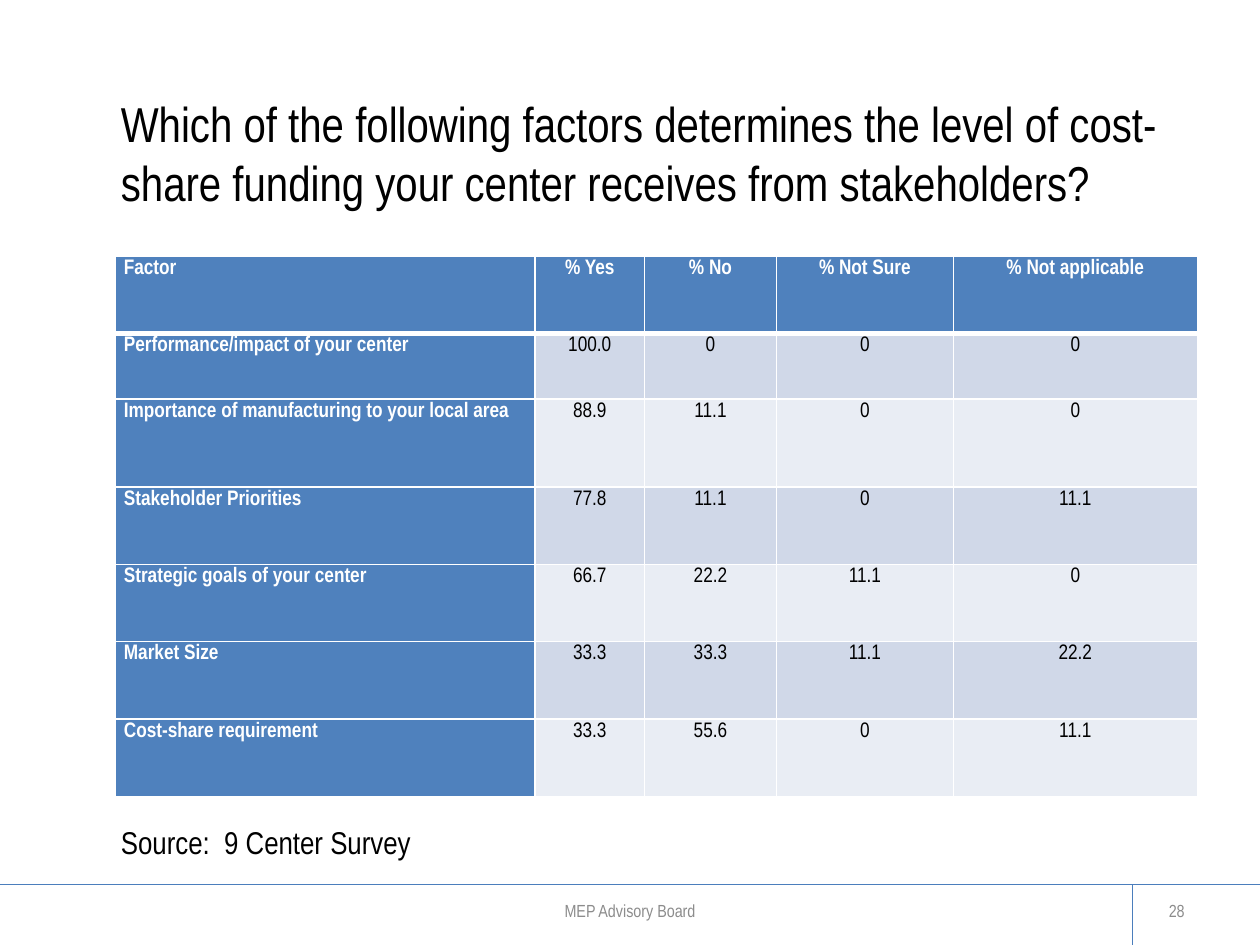
from lxml.etree import SubElement
from pptx import Presentation
from pptx.dml.color import RGBColor
from pptx.enum.shapes import MSO_CONNECTOR as Connector
from pptx.enum.text import MSO_ANCHOR as Anchor, PP_ALIGN as Align
from pptx.oxml.ns import qn
from pptx.util import Pt

FONT = "Arial Narrow"
BLACK = RGBColor(0x00, 0x00, 0x00)
WHITE = RGBColor(0xFF, 0xFF, 0xFF)
GREY = RGBColor(0x8C, 0x8C, 0x8C)
BLUE = RGBColor(0x4F, 0x81, 0xBD)
RULE_BLUE = RGBColor(0x4B, 0x7E, 0xBC)
BAND_DARK = RGBColor(0xD0, 0xD8, 0xE8)
BAND_LIGHT = RGBColor(0xE9, 0xED, 0xF4)

COLUMN_WIDTHS = [240, 62.5, 75.5, 101, 139.5]
ROW_HEIGHTS = [44.2, 37.5, 50.4, 44.2, 44.2, 44.2, 44.2]
SURVEY = [
    ("Factor", "% Yes", "% No", "% Not Sure", "% Not applicable"),
    ("Performance/impact of your center", "100.0", "0", "0", "0"),
    ("Importance of manufacturing to your local area", "88.9", "11.1", "0", "0"),
    ("Stakeholder Priorities", "77.8", "11.1", "0", "11.1"),
    ("Strategic goals of your center", "66.7", "22.2", "11.1", "0"),
    ("Market Size", "33.3", "33.3", "11.1", "22.2"),
    ("Cost-share requirement", "33.3", "55.6", "0", "11.1"),
]


def style_font(font, size, color, bold=False):
    font.name, font.size, font.bold = FONT, Pt(size), bold
    font.color.rgb = color


def add_text(page, area, text, size, color, align=Align.LEFT, anchor=Anchor.MIDDLE):
    box = page.shapes.add_textbox(*map(Pt, area))
    frame = box.text_frame
    frame.word_wrap = True
    frame.vertical_anchor = anchor
    frame.text = text
    para = frame.paragraphs[0]
    para.alignment = align
    style_font(para.runs[0].font, size, color)


def add_rule(page, x1, y1, x2, y2):
    rule = page.shapes.add_connector(Connector.STRAIGHT, Pt(x1), Pt(y1), Pt(x2), Pt(y2))
    rule.line.color.rgb = RULE_BLUE
    rule.line.width = Pt(0.75)
    SubElement(rule._element.spPr, qn("a:effectLst"))


def set_border(cell, side, width):
    line = SubElement(cell._tc.get_or_add_tcPr(), qn(f"a:{side}"), w=str(Pt(width)))
    fill = SubElement(line, qn("a:solidFill"))
    SubElement(fill, qn("a:srgbClr"), val=str(WHITE))


def style_cell(cell, text, row, column):
    heading = row == 0 or column == 0
    cell.margin_left = cell.margin_right = Pt(5)
    cell.margin_top = cell.margin_bottom = 0
    # Borders precede the fill; a thick line separates the header from the body
    set_border(cell, "lnL", 1)
    set_border(cell, "lnR", 1)
    set_border(cell, "lnT", 3 if row == 1 else 1)
    set_border(cell, "lnB", 3 if row == 0 else 1)
    cell.fill.solid()
    band = BAND_DARK if row % 2 else BAND_LIGHT
    cell.fill.fore_color.rgb = BLUE if heading else band
    cell.text = text
    para = cell.text_frame.paragraphs[0]
    para.alignment = Align.CENTER if column else Align.LEFT
    para.line_spacing = 1.15
    style_font(para.runs[0].font, 12, WHITE if heading else BLACK, heading)


def add_survey_table(page, left, top):
    size = Pt(sum(COLUMN_WIDTHS)), Pt(sum(ROW_HEIGHTS))
    frame = page.shapes.add_table(len(SURVEY), len(COLUMN_WIDTHS), Pt(left), Pt(top), *size)
    table = frame.table
    for column, width in zip(table.columns, COLUMN_WIDTHS):
        column.width = Pt(width)
    for row, height in zip(table.rows, ROW_HEIGHTS):
        row.height = Pt(height)
    for r, values in enumerate(SURVEY):
        for c, text in enumerate(values):
            style_cell(table.cell(r, c), text, r, c)


def add_footer(page, left, top, width, height):
    divider = left + 647.3
    add_rule(page, left, top, left + width, top)
    add_rule(page, divider, top, divider, top + height)
    text_top = top + 6.5
    add_text(page, (left + 516, text_top, 168, 17.3), "28", 10, GREY, Align.RIGHT)
    add_text(page, (left + 246, text_top, 228, 17.3), "MEP Advisory Board", 10, GREY, Align.CENTER)


def main():
    deck = Presentation()
    deck.slide_width, deck.slide_height = Pt(720), Pt(540)
    page = deck.slides.add_slide(deck.slide_layouts[6])

    # Footer rules, label and page number
    add_footer(page, 0, 505.4, 720, 34.6)

    # Title
    title = ("Which of the following factors determines the level of "
             "cost-share funding your center receives from stakeholders?")
    add_text(page, (62, 51.3, 622, 72), title, 28, BLACK)

    # Survey results and their source
    add_survey_table(page, 65.8, 146.2)
    add_text(page, (62, 466.6, 572.4, 29), "Source:  9 Center Survey", 18, BLACK, anchor=Anchor.TOP)

    deck.save("out.pptx")


if __name__ == "__main__":
    main()
